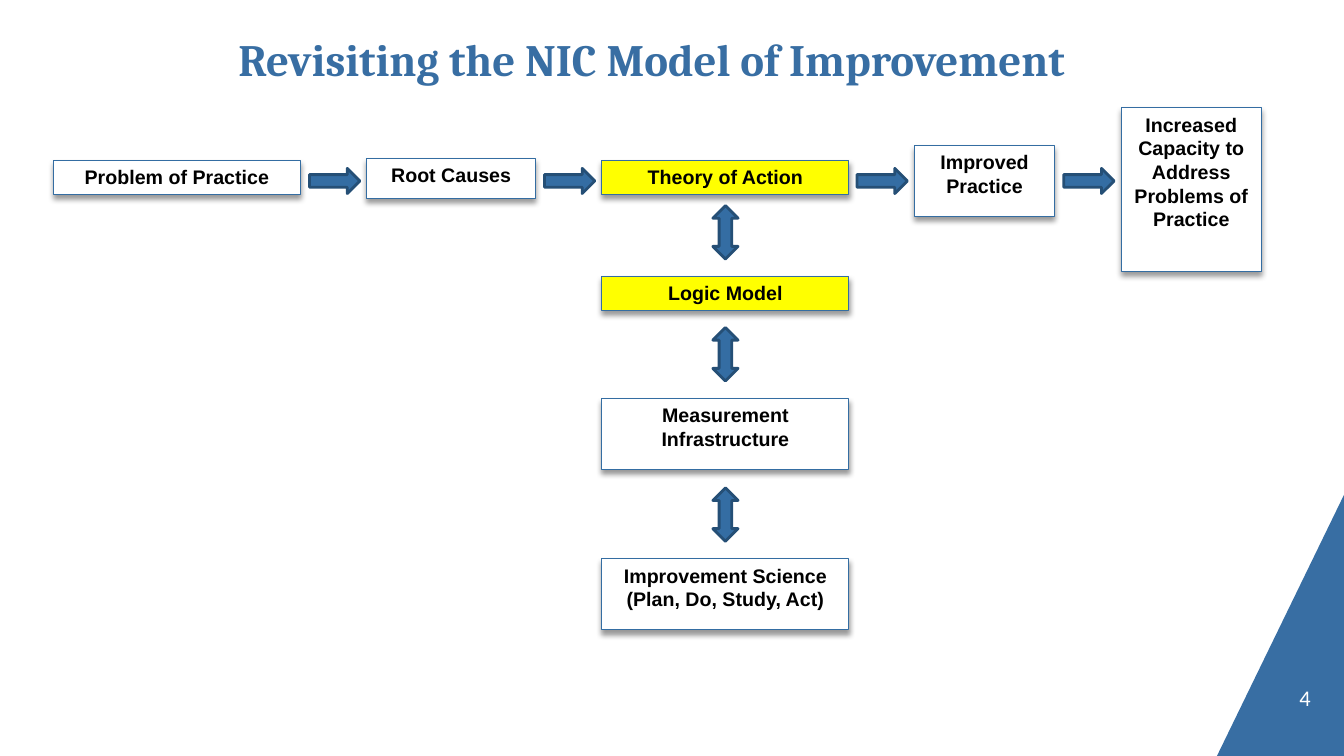
from lxml import etree
from pptx import Presentation
from pptx import util as u
from pptx.dml.color import RGBColor
from pptx.enum import shapes, text
from pptx.oxml.ns import qn

GRID = u.Inches(0.1)
COLS, ROWS = 133.3, 75
BLUE, ARROW, EDGE, ARROW_EDGE = "386EA3", "346DA3", "346DA2", "254F76"
WHITE, YELLOW, BLACK = "FFFFFF", "FFFF00", "000000"


def rgb(color):
    """Turn a hex string into a colour."""
    return RGBColor.from_string(color)


def cells(*values):
    """Turn grid counts into lengths."""
    return [u.Emu(round(v * GRID)) for v in values]


def paint(sp, fill, line, weight):
    """Set fill and outline and drop the inherited shadow."""
    sp.shadow.inherit = False
    sp.fill.solid()
    sp.fill.fore_color.rgb = rgb(fill)
    sp.line.color.rgb = rgb(line)
    sp.line.width = u.Pt(weight)


def drop_shadow(sp):
    """Give a shape a soft shadow below it."""
    effects = sp._element.spPr.find(qn("a:effectLst"))
    shadow = etree.SubElement(effects, qn("a:outerShdw"), blurRad=str(u.Pt(4)),
                              dist=str(u.Pt(3)), dir="5400000", rotWithShape="0")
    color = etree.SubElement(shadow, qn("a:srgbClr"), val=BLACK)
    etree.SubElement(color, qn("a:alpha"), val="40000")


def write(sp, words, font, size, color, align, anchor, bold=False):
    """Put one formatted paragraph into a shape."""
    tf = sp.text_frame
    tf.word_wrap = True
    tf.vertical_anchor = anchor
    p = tf.paragraphs[0]
    p.text = words
    p.alignment = align
    p.font.name, p.font.size, p.font.bold = font, u.Pt(size), bold
    p.font.color.rgb = rgb(color)
    return tf


def clear_margins(tf):
    """Remove the insets of a text frame."""
    tf.margin_left = tf.margin_right = tf.margin_top = tf.margin_bottom = 0


def add_step(s, words, fill, x, y, w, h):
    """Draw one labelled step of the model."""
    sp = s.shapes.add_shape(shapes.MSO_SHAPE.RECTANGLE, *cells(x, y, w, h))
    paint(sp, fill, EDGE, 0.75)
    drop_shadow(sp)
    write(sp, words, "Arial", 14, BLACK, text.PP_ALIGN.CENTER,
          text.MSO_ANCHOR.TOP, True)


def add_arrow(s, kind, x, y, w, h):
    """Draw one block arrow."""
    sp = s.shapes.add_shape(kind, *cells(x, y, w, h))
    paint(sp, ARROW, ARROW_EDGE, 2)


def add_title(s, x, y, w, h):
    """Place and format the title."""
    sp = s.shapes.title
    sp.left, sp.top, sp.width, sp.height = cells(x, y, w, h)
    clear_margins(write(sp, "Revisiting the NIC Model of Improvement ", "Cambria", 32,
                        BLUE, text.PP_ALIGN.CENTER, text.MSO_ANCHOR.MIDDLE, True))


def add_corner(s, x, y, w, h):
    """Draw the corner wedge with the slide number."""
    fb = s.shapes.build_freeform(*cells(x + w, y))
    fb.add_line_segments([cells(x, y + h), cells(x + w, y + h)], close=True)
    wedge = fb.convert_to_shape()
    paint(wedge, BLUE, BLUE, 0)
    wedge.line.fill.background()
    number = s.shapes.add_textbox(*cells(x - 0.6, y + 18.4, 9.9, 3))
    clear_margins(write(number, "4", "Calibri", 16, WHITE,
                        text.PP_ALIGN.RIGHT, text.MSO_ANCHOR.BOTTOM))


def add_flow(s, x, y):
    """Draw the row of steps, each after the first led by an arrow."""
    steps = [("Problem of Practice", WHITE, 0, 5.2, 24.5, 3.4),
             ("Root Causes", WHITE, 31.1, 5, 16.7, 4),
             ("Theory of Action", YELLOW, 54.4, 5.2, 24.5, 3.4),
             ("Improved Practice", WHITE, 85.4, 3.7, 13.9, 7.1),
             ("Increased Capacity to Address Problems of Practice", WHITE,
              105.9, 0, 13.9, 16.2)]
    for words, fill, left, top, w, h in steps:
        add_step(s, words, fill, x + left, y + top, w, h)
        if left:
            add_arrow(s, shapes.MSO_SHAPE.RIGHT_ARROW, x + left - 5.7, y + 6, 5, 2.5)


def add_support(s, x, y, w):
    """Draw the column of steps, each led by a two-way arrow."""
    steps = [("Logic Model", YELLOW, 7, 3.4),
             ("Measurement Infrastructure", WHITE, 19.1, 7.1),
             ("Improvement Science (Plan, Do, Study, Act)", WHITE, 35, 7.1)]
    for words, fill, top, h in steps:
        add_step(s, words, fill, x, y + top, w, h)
        add_arrow(s, shapes.MSO_SHAPE.UP_DOWN_ARROW,
                  x + (w - 2.5) / 2, y + top - 7, 2.5, 5.3)


def main():
    """Build the slide and save it."""
    prs = Presentation()
    prs.slide_width, prs.slide_height = cells(COLS, ROWS)
    s = prs.slides.add_slide(prs.slide_layouts[5])
    add_corner(s, COLS - 12.6, ROWS - 25.9, 12.6, 25.9)
    add_title(s, 10.3, 3.1, 109.7, 5.4)
    add_flow(s, 5.3, 10.7)
    add_support(s, 59.7, 20.4, 24.5)
    prs.save("out.pptx")


if __name__ == "__main__":
    main()
